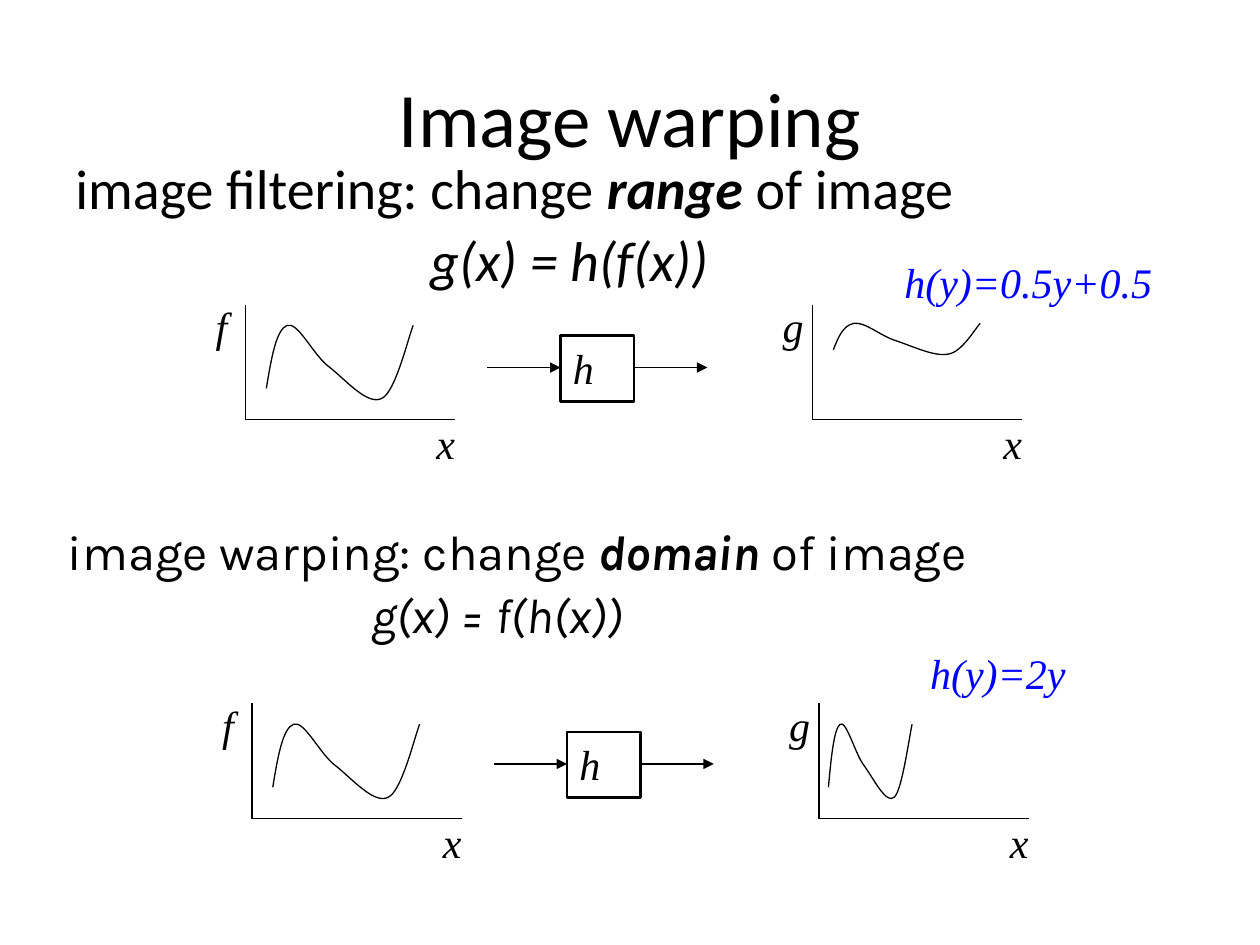
from lxml.etree import SubElement
from pptx import Presentation
from pptx.dml.color import RGBColor
from pptx.enum.shapes import MSO_CONNECTOR, MSO_SHAPE
from pptx.enum.text import MSO_ANCHOR, PP_ALIGN
from pptx.oxml.ns import qn
from pptx.util import Cm, Pt

BLACK, BLUE = "000000", "0000FF"
SERIF = "Times New Roman"
AXIS_WIDTH, AXIS_HEIGHT = 4.23, 2.32
GRAPH_GAP = 11.43  # from the axis of f to the axis of g

# Signal in cm: a start point, then three points per Bezier segment
SIGNAL = [(0, 1.27),
          (0.1, 0.66), (0.2, 0.08), (0.42, 0),
          (0.64, -0.08), (0.95, 0.61), (1.27, 0.84),
          (1.59, 1.09), (2.05, 1.63), (2.33, 1.47),
          (2.6, 1.35), (2.86, 0.25), (2.96, 0)]


def color(code):
    return RGBColor.from_string(code)


def set_line(shape, width):
    shape.line.color.rgb = color(BLACK)
    shape.line.width = Pt(width)


def style_span(span, size, font, code=BLACK, bold=False, italic=False):
    span.font.size = Pt(size)
    span.font.name = font
    span.font.color.rgb = color(code)
    span.font.bold = bold
    span.font.italic = italic


def add_text(shapes, text, left, top, width, height, size=24, font=SERIF,
             code=BLACK, italic=True, wrap=True):
    box = shapes.add_textbox(Cm(left), Cm(top), Cm(width), Cm(height))
    frame = box.text_frame
    frame.word_wrap = wrap
    frame.text = text
    style_span(frame.paragraphs[0].runs[0], size, font, code, italic=italic)
    return frame


def add_statement(shapes, parts, formula, left, top, width, height, size, font, indent):
    """A sentence whose middle part is stressed, with a formula below it."""
    box = shapes.add_textbox(Cm(left), Cm(top), Cm(width), Cm(height))
    frame = box.text_frame
    frame.word_wrap = True
    sentence = frame.paragraphs[0]
    for index, part in enumerate(parts):
        span = sentence.add_run()
        span.text = part
        stressed = index == 1
        style_span(span, size, font, bold=stressed, italic=stressed)
    para = frame.add_paragraph()
    para.text = formula
    style_span(para.runs[0], size, font, italic=True)
    para.space_before = Pt(size * 0.2)
    para._p.get_or_add_pPr().set("marL", str(Cm(indent)))
    for para in frame.paragraphs:
        para.line_spacing = 0.9


def add_line(shapes, start, end, arrow=False):
    line = shapes.add_connector(MSO_CONNECTOR.STRAIGHT,
                                *(Cm(value) for value in (*start, *end)))
    set_line(line, 0.75)
    properties = line._element.spPr
    if arrow:
        SubElement(properties.find(qn("a:ln")), qn("a:tailEnd"), type="triangle")
    SubElement(properties, qn("a:effectLst"))


def bend_segments(curve):
    """Turn each three straight segments into one cubic Bezier segment."""
    outline = next(curve._element.iter(qn("a:path")))
    segments = outline.findall(qn("a:lnTo"))
    for first in range(0, len(segments), 3):
        bezier = SubElement(outline, qn("a:cubicBezTo"))
        for segment in segments[first:first + 3]:
            bezier.append(segment[0])
            outline.remove(segment)


def add_curve(shapes, left, top, scale_x, scale_y):
    points = [(Cm(left + x * scale_x), Cm(top + y * scale_y)) for x, y in SIGNAL]
    builder = shapes.build_freeform(*points[0])
    builder.add_line_segments(points[1:], close=False)
    curve = builder.convert_to_shape()
    bend_segments(curve)
    curve.shadow.inherit = False
    curve.fill.background()
    set_line(curve, 0.75)


def add_graph(slide, name, left, top, shift=0.42, drop=0.42, scale_x=1, scale_y=1):
    shapes = slide.shapes.add_group_shape().shapes
    bottom = top + AXIS_HEIGHT
    add_line(shapes, (left, top), (left, bottom))
    add_line(shapes, (left, bottom), (left + AXIS_WIDTH, bottom))
    add_curve(shapes, left + shift, top + drop, scale_x, scale_y)
    add_text(shapes, name, left - 0.85, top - 0.21, 1.07, 1.02)
    add_text(shapes, "x", left + 3.6, bottom - 0.17, 1.07, 1.02)


def add_function_box(slide, left, top):
    shapes = slide.shapes.add_group_shape().shapes
    width = 1.48
    box = shapes.add_shape(MSO_SHAPE.RECTANGLE, Cm(left), Cm(top), Cm(width), Cm(1.32))
    box.shadow.inherit = False
    box.fill.background()
    set_line(box, 1.5)
    frame = box.text_frame
    frame.text = "h"
    frame.vertical_anchor = MSO_ANCHOR.TOP
    frame.paragraphs[0].alignment = PP_ALIGN.LEFT
    style_span(frame.paragraphs[0].runs[0], 24, SERIF, italic=True)
    middle = top + 0.64
    for start in (left - width, left + width):
        add_line(shapes, (start, middle), (start + width, middle), arrow=True)


def add_pipeline(slide, left, top, box_top, **change):
    """Signal f, the function h, and the changed signal g."""
    add_graph(slide, "f", left, top)
    add_function_box(slide, left + 6.35, box_top)
    add_graph(slide, "g", left + GRAPH_GAP, top, **change)


def main():
    deck = Presentation()
    deck.slide_width, deck.slide_height = Cm(25.4), Cm(19.05)
    slide = deck.slides.add_slide(deck.slide_layouts[6])
    shapes = slide.shapes

    # Title
    title = add_text(shapes, "Image warping", 1.27, 0.76, 22.86, 3.18,
                     size=44, font="Calibri", italic=False)
    title.vertical_anchor = MSO_ANCHOR.MIDDLE
    title.paragraphs[0].alignment = PP_ALIGN.CENTER

    # Filtering: the range changes
    add_statement(shapes, ["image filtering: change ", "range", " of image"],
                  "g(x) = h(f(x))", 1.27, 3.12, 22.86, 2.87, 32, "Calibri", 7.16)
    add_pipeline(slide, 4.95, 6.14, 6.77, drop=0.38, scale_y=0.42)
    add_text(shapes, "h(y)=0.5y+0.5", 17.98, 5.05, 5.51, 1.27, code=BLUE, wrap=False)

    # Warping: the domain changes
    add_statement(shapes, ["image warping: change ", "domain", " of image"],
                  "g(x) = f(h(x))", 1.12, 10.52, 21.59, 3.2, 28, "Karla", 6.12)
    add_pipeline(slide, 5.08, 14.18, 14.76, shift=0.19, scale_x=0.57)
    add_text(shapes, "h(y)=2y", 18.5, 12.93, 3.25, 1.27, code=BLUE, wrap=False)

    deck.save("out.pptx")


if __name__ == "__main__":
    main()
